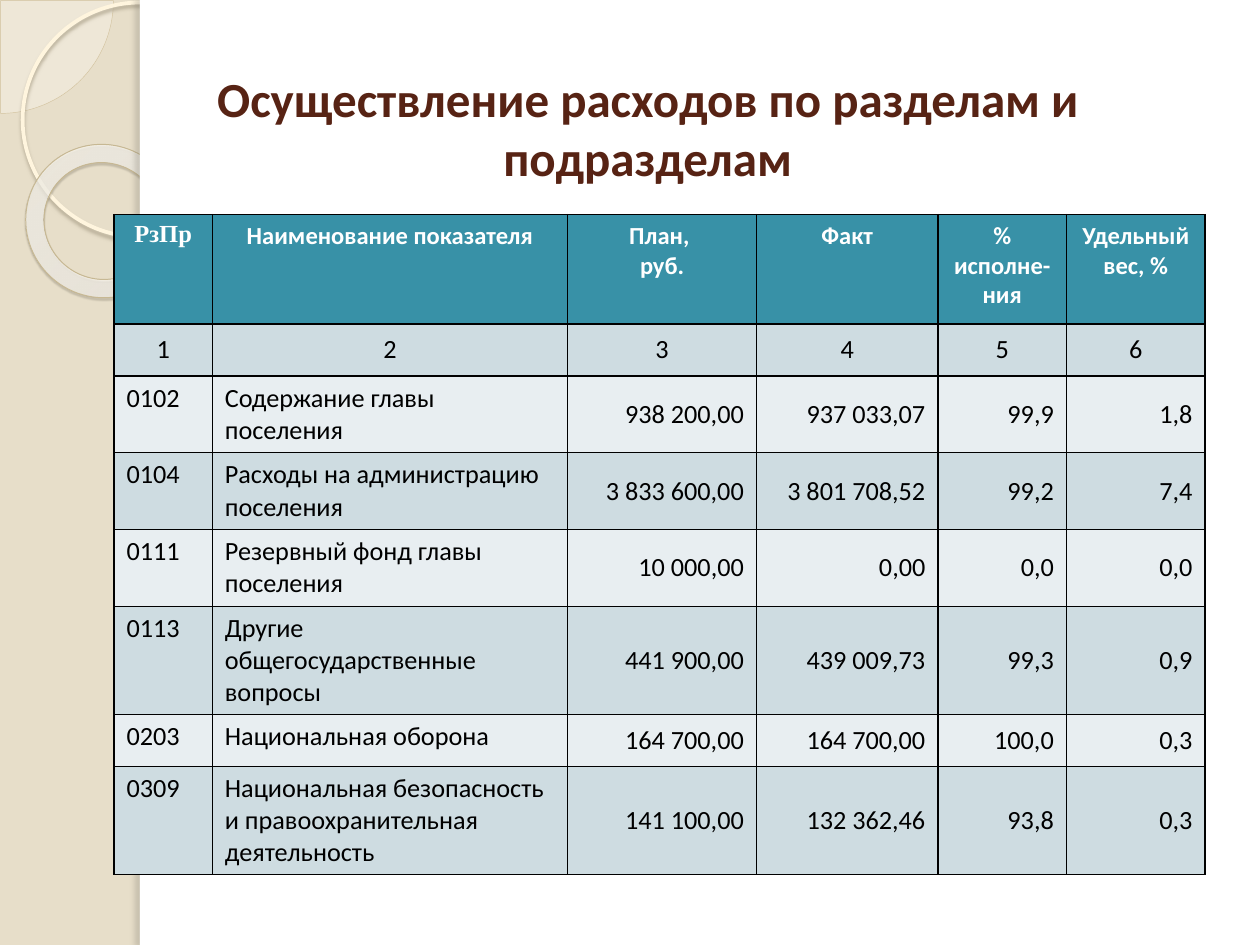
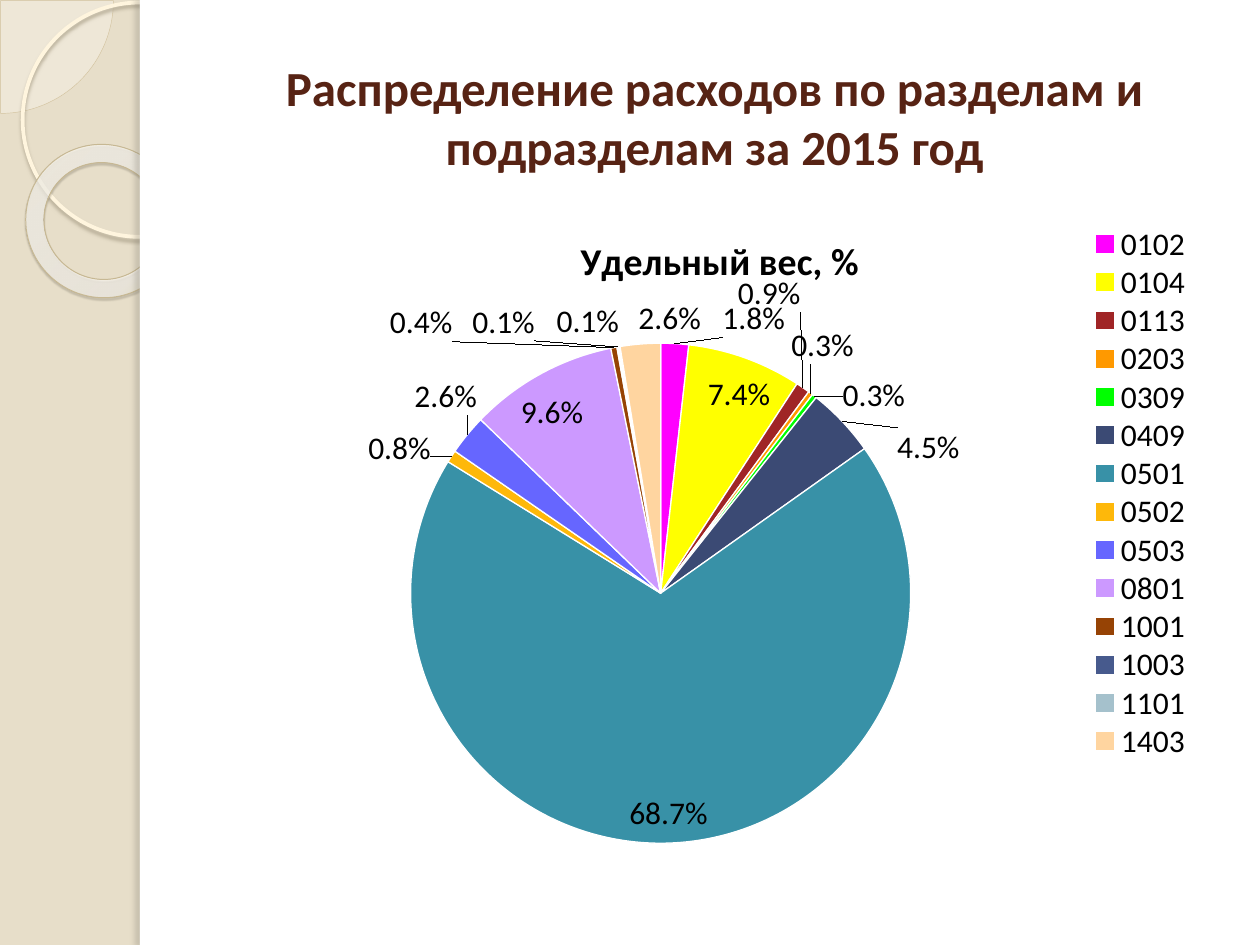
from dataclasses import dataclass
from typing import Optional

from lxml.etree import SubElement
from pptx import Presentation
from pptx.chart.data import CategoryChartData
from pptx.dml.color import RGBColor
from pptx.enum.chart import XL_CHART_TYPE as Chart, XL_LABEL_POSITION as Pos, XL_LEGEND_POSITION as Legend
from pptx.enum.shapes import MSO_SHAPE as Shape
from pptx.enum.text import MSO_ANCHOR as Anchor, PP_ALIGN as Align
from pptx.oxml import parse_xml
from pptx.oxml.ns import nsdecls, qn
from pptx.util import Inches, Pt

COLORS = {
    "sand": "E7DEC9", "cream": "FEFAF4", "tan": "D3C39F", "ivory": "FFF5DE",
    "ring": "C7B893", "ring_shade": "B0A68F", "donut_shade": "5A5444",
    "band_shade": "736F63", "white": "FFFFFF", "black": "000000",
    "title": "572314", "header": "3891A7", "odd": "CEDCE1", "even": "E8EEF1",
}
BODY, SERIF = "Calibri", "Times New Roman"
SLIDE_W, SLIDE_H = Inches(10), Inches(7.5)
GRID_COLS, GRID_ROWS = 100, 75


@dataclass(frozen=True)
class Box:
    """A place on the slide in grid columns and rows."""
    left: float
    top: float
    width: float
    height: float

    def emu(self) -> tuple[int, int, int, int]:
        """Return left, top, width and height in EMU."""
        return col(self.left), row(self.top), col(self.width), row(self.height)


@dataclass(frozen=True)
class Shadow:
    """An outer shadow: colour, opacity, blur, distance and direction."""
    color: str
    alpha: int
    blur: float
    dist: float
    angle: int


@dataclass(frozen=True)
class Decor:
    """One shape of the side ornament."""
    shape: Shape
    box: Box
    fill: Optional[str] = None
    alpha: int = 100
    line: Optional[str] = None
    weight: float = 0
    adj: tuple[float, ...] = ()
    rotation: float = 0
    gradient: tuple[tuple[int, str, int], ...] = ()
    shadow: Optional[Shadow] = None


@dataclass(frozen=True)
class Slice:
    """A pie slice; shift moves its label by percents of the chart."""
    code: str
    share: float
    color: str
    shift: Optional[tuple[float, float]] = None


DECOR = (
    Decor(Shape.PIE, Box(-8.9, -8.9, 17.9, 17.9), "cream", 33, "tan", 0.25, (0, 54)),
    Decor(Shape.OVAL, Box(1.8, 0.2, 18.6, 18.6), line="ivory", weight=2.15,
          shadow=Shadow("ring_shade", 85, 2, 2, 90)),
    Decor(Shape.DONUT, Box(2, 11.5, 12.3, 12.1), line="ring", weight=0.58, adj=(0.12,), rotation=38.6,
          gradient=((0, "FFFCF6", 70), (70, "FFFEFB", 55), (100, "F0D28E", 60)),
          shadow=Shadow("donut_shade", 35, 1, 1.2, 75)),
    Decor(Shape.RECTANGLE, Box(11.1, 0, 88.9, 75), "white"),
    Decor(Shape.RECTANGLE, Box(11.1, 0, 0.8, 75), "white", shadow=Shadow("band_shade", 25, 3, 3, 180)),
)

HEADER = ("РзПр", "Наименование показателя", "План, \nруб.", "Факт", "% исполне-ния", "Удельный вес, %")
EXPENSES = (
    ("0102", "Содержание главы поселения", "938 200,00", "937 033,07", "99,9", "1,8"),
    ("0104", "Расходы на администрацию поселения", "3 833 600,00", "3 801 708,52", "99,2", "7,4"),
    ("0111", "Резервный фонд главы поселения", "10 000,00", "0,00", "0,0", "0,0"),
    ("0113", "Другие общегосударственные вопросы", "441 900,00", "439 009,73", "99,3", "0,9"),
    ("0203", "Национальная оборона", "164 700,00", "164 700,00", "100,0", "0,3"),
    ("0309", "Национальная безопасность и правоохранительная деятельность",
     "141 100,00", "132 362,46", "93,8", "0,3"),
)
COL_WIDTHS = (7.8, 28.2, 15, 14.4, 10.2, 11)
ROW_HEIGHTS = (8.7, 4.1, 6.1, 6.1, 6.1, 8.6, 4.1, 8.6)

SLICES = (
    Slice("0102", 0.018, "FF00FF", (7.6, 0.2)),
    Slice("0104", 0.074, "FFFF00"),
    Slice("0113", 0.009, "A02526", (-6.7, -10.5)),
    Slice("0203", 0.003, "FF9900", (-2.3, -3.5)),
    Slice("0309", 0.003, "00FF00", (2.3, 3.6)),
    Slice("0409", 0.045, "3B4A74", (4.8, 7.5)),
    Slice("0501", 0.687, "3891A7"),
    Slice("0502", 0.008, "FEB80A", (-1.4, 2.3)),
    Slice("0503", 0.026, "6666FF", (1.5, -2.2)),
    Slice("0801", 0.096, "CC99FF"),
    Slice("1001", 0.004, "964305", (-15.5, 0.2)),
    Slice("1003", 0.001, "475A8D", (-7.9, 0.2)),
    Slice("1101", 0.001, "A5C1CC", (0.1, 0.2)),
    Slice("1403", 0.026, "FFD5A0", (2.9, 0.1)),
)


def col(n: float) -> int:
    """Convert grid columns to EMU."""
    return round(SLIDE_W * n / GRID_COLS)


def row(n: float) -> int:
    """Convert grid rows to EMU."""
    return round(SLIDE_H * n / GRID_ROWS)


def rgb(name: str) -> RGBColor:
    """Look up a named colour, or read a hex string."""
    return RGBColor.from_string(COLORS.get(name, name))


def add_alpha(parent, alpha: int) -> None:
    """Set the opacity of a colour element in percent."""
    SubElement(parent, qn("a:alpha")).set("val", str(alpha * 1000))


def write(tf, text: str, *, size: float, font: str = BODY, color: str = "black",
          bold: bool = False, align: Align = Align.LEFT) -> None:
    """Write formatted text, one paragraph a line."""
    tf.word_wrap = True
    for i, line in enumerate(text.split("\n")):
        p = tf.add_paragraph() if i else tf.paragraphs[0]
        p.alignment = align
        r = p.add_run()
        r.text = line
        r.font.size, r.font.name, r.font.bold = Pt(size), font, bold
        r.font.color.rgb = rgb(color)


def set_gradient(sp, stops: tuple[tuple[int, str, int], ...]) -> None:
    """Fill a shape with a circular gradient."""
    gs = "".join(f'<a:gs pos="{pos * 1000}"><a:srgbClr val="{color}"><a:alpha val="{alpha * 1000}"/>'
                 "</a:srgbClr></a:gs>" for pos, color, alpha in stops)
    sp._element.spPr.find(qn("a:prstGeom")).addnext(parse_xml(
        f'<a:gradFill {nsdecls("a")}><a:gsLst>{gs}</a:gsLst><a:path path="circle">'
        '<a:fillToRect l="-408000" t="-50000" r="508000" b="150000"/></a:path></a:gradFill>'))


def set_shadow(sp, shadow: Shadow) -> None:
    """Give a shape an outer shadow."""
    fx = sp._element.spPr.find(qn("a:effectLst"))
    outer = SubElement(fx, qn("a:outerShdw"), blurRad=str(Pt(shadow.blur)), dist=str(Pt(shadow.dist)),
                       dir=str(shadow.angle * 60000), algn="tl", rotWithShape="0")
    add_alpha(SubElement(outer, qn("a:srgbClr"), val=COLORS[shadow.color]), shadow.alpha)


def add_decor(slide, item: Decor) -> None:
    """Draw one ornament shape."""
    sp = slide.shapes.add_shape(item.shape, *item.box.emu())
    sp.rotation = item.rotation
    sp.shadow.inherit = False
    for i, value in enumerate(item.adj):
        sp.adjustments[i] = value
    if item.gradient:
        set_gradient(sp, item.gradient)
    elif item.fill:
        sp.fill.solid()
        sp.fill.fore_color.rgb = rgb(item.fill)
        add_alpha(sp._element.spPr.find(qn("a:solidFill"))[0], item.alpha)
    else:
        sp.fill.background()
    if item.line:
        sp.line.color.rgb = rgb(item.line)
        sp.line.width = Pt(item.weight)
    else:
        sp.line.fill.background()
    if item.shadow:
        set_shadow(sp, item.shadow)


def add_titled_slide(prs, title: str, box: Box):
    """Add a slide with the shared background, ornament and title."""
    slide = prs.slides.add_slide(prs.slide_layouts[6])
    slide.background.fill.solid()
    slide.background.fill.fore_color.rgb = rgb("sand")
    for item in DECOR:
        add_decor(slide, item)
    tf = slide.shapes.add_textbox(*box.emu()).text_frame
    tf.vertical_anchor = Anchor.MIDDLE
    write(tf, title, size=28, color="title", bold=True, align=Align.CENTER)
    return slide


def style_cell(cell, fill: str) -> None:
    """Fill a cell and draw thin black borders."""
    cell.fill.solid()
    cell.fill.fore_color.rgb = rgb(fill)
    for i, side in enumerate("LRTB"):
        cell._tc.tcPr.insert(i, parse_xml(
            f'<a:ln{side} {nsdecls("a")} w="{Pt(1)}"><a:solidFill><a:srgbClr val="{COLORS["black"]}"/>'
            f"</a:solidFill></a:ln{side}>"))


def add_expense_table(slide) -> None:
    """Draw the table of expenses."""
    numbers = tuple(str(n + 1) for n in range(len(HEADER)))
    data = (HEADER, numbers, *EXPENSES)
    box = Box(9.05, 17.03, sum(COL_WIDTHS), sum(ROW_HEIGHTS))
    table = slide.shapes.add_table(len(data), len(HEADER), *box.emu()).table
    for column, width in zip(table.columns, COL_WIDTHS):
        column.width = col(width)
    for line, height in zip(table.rows, ROW_HEIGHTS):
        line.height = row(height)
    for i, texts in enumerate(data):
        for j, text in enumerate(texts):
            cell = table.cell(i, j)
            style_cell(cell, "header" if i == 0 else "odd" if i % 2 else "even")
            if i == 0:
                write(cell.text_frame, text, size=14, font=BODY if j else SERIF,
                      color="white", bold=True, align=Align.CENTER)
                continue
            is_label = i > 1 and j < 2
            cell.vertical_anchor = Anchor.TOP if is_label else Anchor.MIDDLE
            align = Align.CENTER if i == 1 else Align.LEFT if is_label else Align.RIGHT
            write(cell.text_frame, text, size=15, align=align)


def layout_xml(modes: str = "", **percents: float):
    """Build a manual chart layout from percents of the chart."""
    values = "".join(f'<c:{name} val="{n / 100:.3f}"/>' for name, n in percents.items())
    return parse_xml(f'<c:layout {nsdecls("c")}><c:manualLayout>{modes}{values}'
                     "</c:manualLayout></c:layout>")


def place(part, index: int, target: str = "", **percents: float) -> None:
    """Fix a chart part at percents of the chart."""
    for old in part.findall(qn("c:layout")):
        part.remove(old)
    part.insert(index, layout_xml(f'{target}<c:xMode val="edge"/><c:yMode val="edge"/>', **percents))


def add_share_pie(slide, title: str) -> None:
    """Draw the pie of expense shares."""
    data = CategoryChartData(number_format="0.0%")
    data.categories = [s.code for s in SLICES]
    data.add_series(title, [s.share for s in SLICES])
    chart = slide.shapes.add_chart(Chart.PIE, *Box(15.7, 15.8, 82, 52.5).emu(), data).chart
    chart.font.size, chart.font.name = Pt(18), BODY
    chart.font.color.rgb = rgb("black")
    chart.has_title = True
    write(chart.chart_title.text_frame, title, size=21.6, bold=True, align=Align.CENTER)
    chart.has_legend = True
    chart.legend.position = Legend.RIGHT
    chart.legend.include_in_layout = False
    place(chart.chart_title._element, 1, x=36.4, y=4.2)
    place(chart.legend._element, 1, x=85.2, y=3.9, w=12, h=81)
    place(chart._chartSpace.chart.plotArea, 0, '<c:layoutTarget val="inner"/>', x=20.6, y=21.8, w=48.4, h=75.6)
    plot = chart.plots[0]
    plot.vary_by_categories = True
    series = plot.series[0]
    labels = series.data_labels
    labels.show_value = True
    labels.number_format, labels.number_format_is_linked = "0.0%", False
    for i, s in enumerate(SLICES):
        point = series.points[i]
        point.format.fill.solid()
        point.format.fill.fore_color.rgb = rgb(s.color)
        point.format.line.color.rgb = rgb("white")
        point.format.line.width = Pt(0.75)
        point.data_label.position = Pos.OUTSIDE_END if s.shift else Pos.BEST_FIT
    for s, label in zip(SLICES, labels._element.findall(qn("c:dLbl"))):
        label[0].addnext(parse_xml(f'<c:numFmt {nsdecls("c")} formatCode="0.0%" sourceLinked="0"/>'))
        if s.shift:
            label[0].addnext(layout_xml(x=s.shift[0], y=s.shift[1]))


def main() -> None:
    """Build and save the deck."""
    prs = Presentation()
    prs.slide_width, prs.slide_height = SLIDE_W, SLIDE_H
    add_expense_table(add_titled_slide(
        prs, "Осуществление расходов по разделам и подразделам", Box(13, 7.6, 76.8, 5)))
    add_share_pie(add_titled_slide(
        prs, "Распределение расходов по разделам и подразделам за 2015 год", Box(15.7, 3, 82, 12.5)),
        "Удельный вес, %")
    prs.save("out.pptx")


if __name__ == "__main__":
    main()
